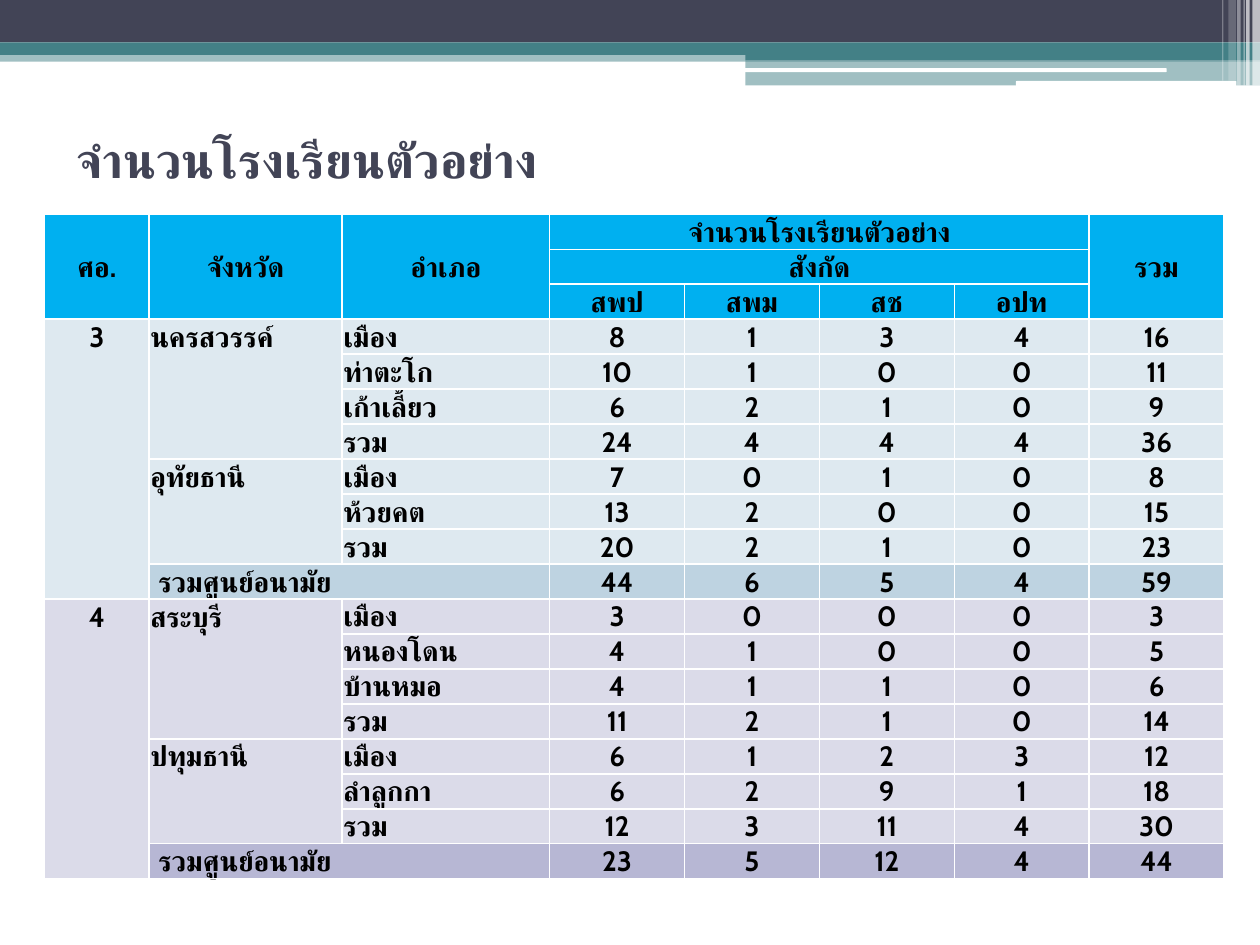
from lxml import etree
from pptx import Presentation
from pptx.dml.color import RGBColor
from pptx.enum.shapes import MSO_SHAPE as SHAPE
from pptx.enum.text import MSO_ANCHOR as ANCHOR, PP_ALIGN as ALIGN
from pptx.oxml import parse_xml
from pptx.oxml.ns import nsdecls, qn
from pptx.util import Pt

FONT = "Cabin"
COLORS = {
    "navy": "424456", "teal": "438086", "white": "FFFFFF", "black": "000000",
    "header": "00B0F0",
    "blue": "DEE9F0", "blue_total": "BED3E1",
    "violet": "DBDBE9", "violet_total": "B7B7D4",
}

# left, top, width, height, colour, opacity in percent
BANDS = [
    (0, 28.8, 720, 6.5, "teal", 50),
    (0, 0, 720, 24.2, "navy", 100),
    (0, 24.2, 720, 7.2, "teal", 100),
    (426, 28.1, 294, 6.5, "teal", 100),
    (426, 34.6, 294, 14.2, "teal", 50),
]
PILLS = [(425.5, 39, 241.2, 2.2), (580.5, 46.3, 126, 2.9)]
# left, width, height, opacity in percent
PINSTRIPES = [
    (715.7, 4.3, 49, 65), (712.1, 2, 49, 65), (710.6, 0.7, 49, 60),
    (707, 2, 49, 40), (702, 4.3, 46.1, 20), (698.4, 0.7, 46.1, 30),
]

COL_WIDTHS = [59.7, 110.3, 118.6] + [77.1] * 5
HEADER_HEIGHTS = [17.7, 17.7, 20]
ROW_HEIGHT = 20
AFFILIATIONS = ["สพป", "สพม", "สช", "อปท"]
CENTRES = [
    ("3", "blue", [
        ("นครสวรรค์", [("เมือง", [8, 1, 3, 4]), ("ท่าตะโก", [10, 1, 0, 0]),
                       ("เก้าเลี้ยว", [6, 2, 1, 0])]),
        ("อุทัยธานี", [("เมือง", [7, 0, 1, 0]), ("ห้วยคต", [13, 2, 0, 0])]),
    ]),
    ("4", "violet", [
        ("สระบุรี", [("เมือง", [3, 0, 0, 0]), ("หนองโดน", [4, 1, 0, 0]),
                     ("บ้านหมอ", [4, 1, 1, 0])]),
        ("ปทุมธานี", [("เมือง", [6, 1, 2, 3]), ("ลำลูกกา", [6, 2, 9, 1])]),
    ]),
]


def rgb(name):
    return RGBColor.from_string(COLORS[name])


def style_text(p, size, color):
    for r in p.runs:
        r.font.size, r.font.bold, r.font.name = Pt(size), True, FONT
        r.font.color.rgb = rgb(color)
        etree.SubElement(r.font._element, qn("a:cs"), typeface=FONT)


def add_block(s, kind, left, top, width, height, color, opacity=100):
    sp = s.shapes.add_shape(kind, Pt(left), Pt(top), Pt(width), Pt(height))
    sp.shadow.inherit = False
    sp.line.fill.background()
    sp.fill.solid()
    sp.fill.fore_color.rgb = rgb(color)
    if opacity < 100:
        clr = sp.fill._xPr.find(f".//{qn('a:srgbClr')}")
        etree.SubElement(clr, qn("a:alpha"), val=str(opacity * 1000))


def add_banner(s):
    for left, top, width, height, color, opacity in BANDS:
        add_block(s, SHAPE.RECTANGLE, left, top, width, height, color, opacity)
    for box in PILLS:
        add_block(s, SHAPE.ROUNDED_RECTANGLE, *box, "white")
    for left, width, height, opacity in PINSTRIPES:
        add_block(s, SHAPE.RECTANGLE, left, 0, width, height, "white", opacity)


def add_title(s, text):
    tf = s.shapes.add_textbox(Pt(36.7), Pt(49), Pt(648), Pt(84.2)).text_frame
    tf.word_wrap = True
    tf.vertical_anchor = ANCHOR.MIDDLE
    tf.text = text
    style_text(tf.paragraphs[0], 28, "navy")


def add_borders(cell):
    tcPr = cell._tc.get_or_add_tcPr()
    for i, side in enumerate(("lnL", "lnR", "lnT", "lnB")):
        tcPr.insert(i, parse_xml(
            f'<a:{side} {nsdecls("a")} w="12700"><a:solidFill>'
            f'<a:srgbClr val="{COLORS["white"]}"/></a:solidFill></a:{side}>'))


def put(table, row, col, text, fill, anchor=ANCHOR.BOTTOM, align=ALIGN.CENTER,
        rows=1, cols=1, indent=0.7):
    """Fill one cell, merged over the given number of rows and columns."""
    cell = table.cell(row, col)
    if rows * cols > 1:
        cell.merge(table.cell(row + rows - 1, col + cols - 1))
    for r in range(row, row + rows):
        for c in range(col, col + cols):
            part = table.cell(r, c)
            part.fill.solid()
            part.fill.fore_color.rgb = rgb(fill)
            add_borders(part)
    cell.margin_left, cell.margin_right = Pt(indent), Pt(0.7)
    cell.margin_top, cell.margin_bottom = Pt(0.7), 0
    cell.vertical_anchor = anchor
    cell.text_frame.text = str(text)
    p = cell.text_frame.paragraphs[0]
    p.alignment = align
    style_text(p, 16, "black")


def put_header(table):
    def head(row, col, text, rows=1, cols=1):
        put(table, row, col, text, "header", ANCHOR.MIDDLE, rows=rows, cols=cols)

    for col, text in ((0, "ศอ."), (1, "จังหวัด"), (2, "อำเภอ"), (7, "รวม")):
        head(0, col, text, rows=3)
    head(0, 3, "จำนวนโรงเรียนตัวอย่าง", cols=4)
    head(1, 3, "สังกัด", cols=4)
    for col, text in enumerate(AFFILIATIONS, 3):
        head(2, col, text)


def put_counts(table, row, counts, fill):
    for col, value in enumerate(counts + [sum(counts)], 3):
        put(table, row, col, value, fill)


def column_sums(rows):
    return [sum(column) for column in zip(*rows)]


def put_centre(table, row, name, fill, provinces):
    """Write one health centre from the given row; return the next free row."""
    first, subtotals = row, []
    for province, districts in provinces:
        subtotals.append(column_sums(counts for _, counts in districts))
        lines = districts + [("รวม", subtotals[-1])]
        put(table, row, 1, province, fill, ANCHOR.TOP, ALIGN.LEFT, rows=len(lines))
        for district, counts in lines:
            put(table, row, 2, district, fill, align=ALIGN.LEFT)
            put_counts(table, row, counts, fill)
            row += 1
    total_fill = f"{fill}_total"
    put(table, row, 1, "รวมศูนย์อนามัย", total_fill, align=ALIGN.LEFT, cols=2, indent=5.3)
    put_counts(table, row, column_sums(subtotals), total_fill)
    put(table, first, 0, name, fill, ANCHOR.TOP, rows=row + 1 - first)
    return row + 1


def add_school_table(s):
    body_rows = sum(1 + sum(len(districts) + 1 for _, districts in provinces)
                    for _, _, provinces in CENTRES)
    heights = HEADER_HEIGHTS + [ROW_HEIGHT] * body_rows
    table = s.shapes.add_table(len(heights), len(COL_WIDTHS), Pt(25.5), Pt(122.6),
                               Pt(sum(COL_WIDTHS)), Pt(sum(heights))).table
    table.first_row = table.horz_banding = False
    for column, width in zip(table.columns, COL_WIDTHS):
        column.width = Pt(width)
    for table_row, height in zip(table.rows, heights):
        table_row.height = Pt(height)
    put_header(table)
    row = len(HEADER_HEIGHTS)
    for name, fill, provinces in CENTRES:
        row = put_centre(table, row, name, fill, provinces)


def main():
    prs = Presentation()
    prs.slide_width, prs.slide_height = Pt(720), Pt(540)
    s = prs.slides.add_slide(prs.slide_layouts[6])
    add_banner(s)
    add_title(s, "จำนวนโรงเรียนตัวอย่าง")
    add_school_table(s)
    prs.save("out.pptx")


if __name__ == "__main__":
    main()
